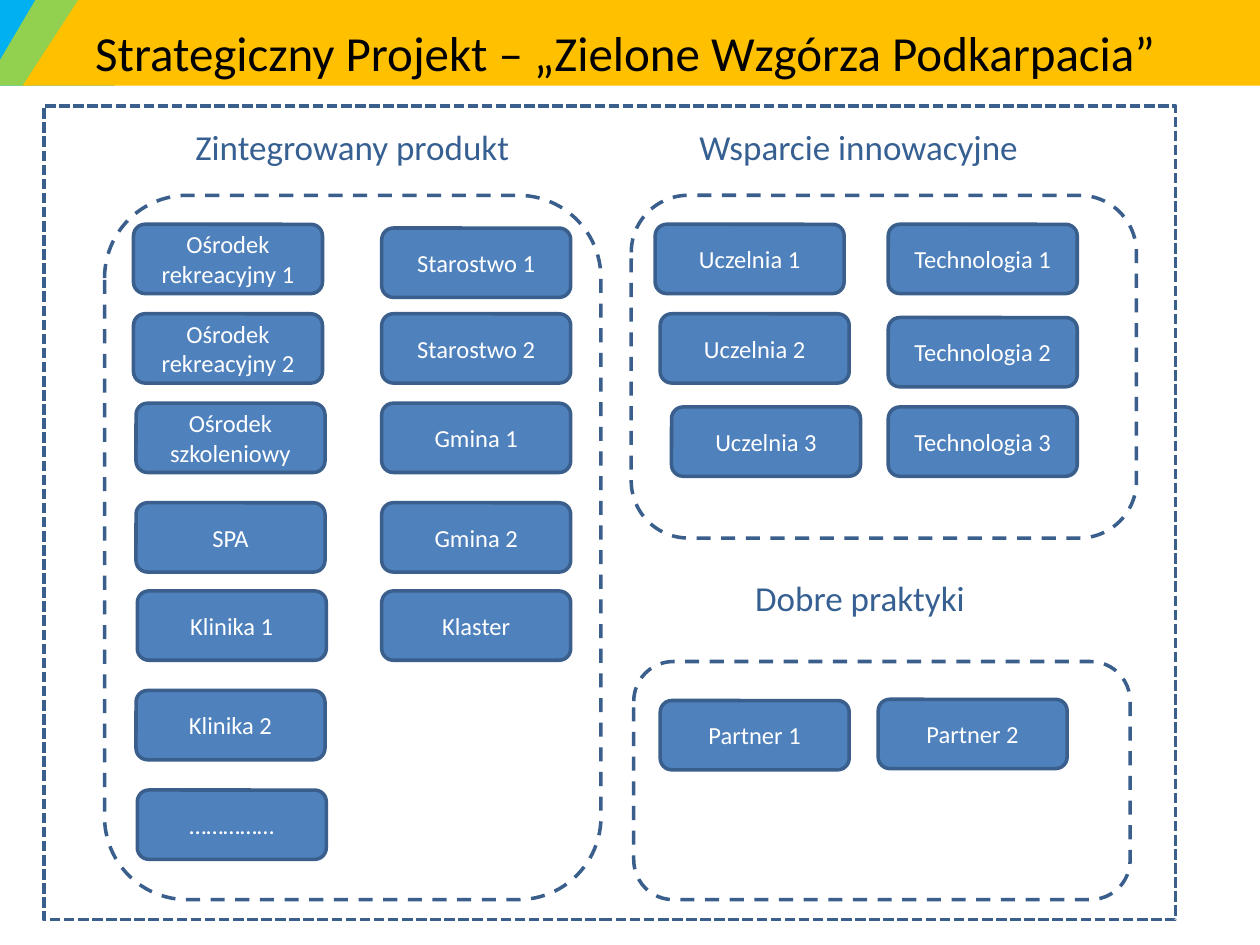
from pptx import Presentation
from pptx.dml.color import RGBColor
from pptx.enum import dml, shapes, text
from pptx.util import Inches, Pt

SHAPE = shapes.MSO_SHAPE
DASH = dml.MSO_LINE


def add_block(kind, place, fill=None, line=None, dash=None):
    """Add a shadowless shape; place is left, top, width, height in inches."""
    block = page.shapes.add_shape(kind, *map(Inches, place))
    block.shadow.inherit = False
    if fill:
        block.fill.solid()
        block.fill.fore_color.rgb = RGBColor.from_string(fill)
    else:
        block.fill.background()
    if line:
        block.line.color.rgb = RGBColor.from_string(line)
        block.line.width = Pt(2)
        block.line.dash_style = dash
    else:
        block.line.fill.background()
    return block


def write(box, words, size, color, anchor=text.MSO_ANCHOR.TOP):
    frame = box.text_frame
    frame.word_wrap = True
    frame.vertical_anchor = anchor
    frame.text = words
    para = frame.paragraphs[0]
    para.alignment = text.PP_ALIGN.CENTER
    font = para.runs[0].font
    font.name = "Calibri"
    font.size = Pt(size)
    font.color.rgb = RGBColor.from_string(color)


deck = Presentation()
deck.slide_width, deck.slide_height = Inches(10), Inches(7.5)
page = deck.slides.add_slide(deck.slide_layouts[5])

# Banner
add_block(SHAPE.RECTANGLE, (-0.02, 0, 0.93, 0.68), "00B0F0")
for left, width, slant, color in [(-0.12, 0.77, 0.59, "92D050"),
                                  (0.18, 10.33, 0.65, "FFC000")]:
    stripe = add_block(SHAPE.PARALLELOGRAM, (left, 0, width, 0.68), color)
    stripe.adjustments[0] = slant

# Title, brought in front of the banner
title = page.shapes.title
title.left, title.top = Inches(0.39), Inches(0.13)
title.width, title.height = Inches(9.14), Inches(0.57)
write(title, "Strategiczny Projekt – „Zielone Wzgórza Podkarpacia”", 28, "000000")
page.shapes._spTree.append(title._element)

# Dashed frames: the whole project and its three groups
add_block(SHAPE.RECTANGLE, (0.35, 0.84, 8.98, 6.46), line="3A5F8C",
          dash=DASH.SQUARE_DOT)
for place in [(0.83, 1.55, 3.94, 5.59), (5.01, 1.55, 4.01, 2.72),
              (5.03, 5.25, 3.94, 1.89)]:
    add_block(SHAPE.ROUNDED_RECTANGLE, place, line="3A5F8C", dash=DASH.DASH)

# Group headings
for words, left, top in [("Zintegrowany produkt", 1.22, 0.95),
                         ("Wsparcie innowacyjne", 5.24, 0.95),
                         ("Dobre praktyki", 5.25, 4.53)]:
    heading = page.shapes.add_textbox(Inches(left), Inches(top),
                                      Inches(3.15), Inches(0.44))
    write(heading, words, 20, "376092")

# Members of the groups
members = [
    ("Ośrodek rekreacyjny 1", 1.06, 1.78),
    ("Ośrodek rekreacyjny 2", 1.06, 2.49),
    ("Ośrodek szkoleniowy", 1.08, 3.2),
    ("SPA", 1.08, 3.99),
    ("Klinika 1", 1.09, 4.69),
    ("Klinika 2", 1.08, 5.48),
    ("……………", 1.09, 6.27),
    ("Starostwo 1", 3.03, 1.81),
    ("Starostwo 2", 3.03, 2.49),
    ("Gmina 1", 3.03, 3.2),
    ("Gmina 2", 3.03, 3.99),
    ("Klaster", 3.03, 4.69),
    ("Uczelnia 1", 5.2, 1.78),
    ("Uczelnia 2", 5.24, 2.49),
    ("Uczelnia 3", 5.33, 3.23),
    ("Technologia 1", 7.05, 1.78),
    ("Technologia 2", 7.05, 2.52),
    ("Technologia 3", 7.05, 3.23),
    ("Partner 1", 5.24, 5.56),
    ("Partner 2", 6.97, 5.55),
]
for words, left, top in members:
    member = add_block(SHAPE.ROUNDED_RECTANGLE, (left, top, 1.5, 0.55),
                       "4F81BD", "3A5F8C")
    write(member, words, 14, "FFFFFF", text.MSO_ANCHOR.MIDDLE)

deck.save("out.pptx")
